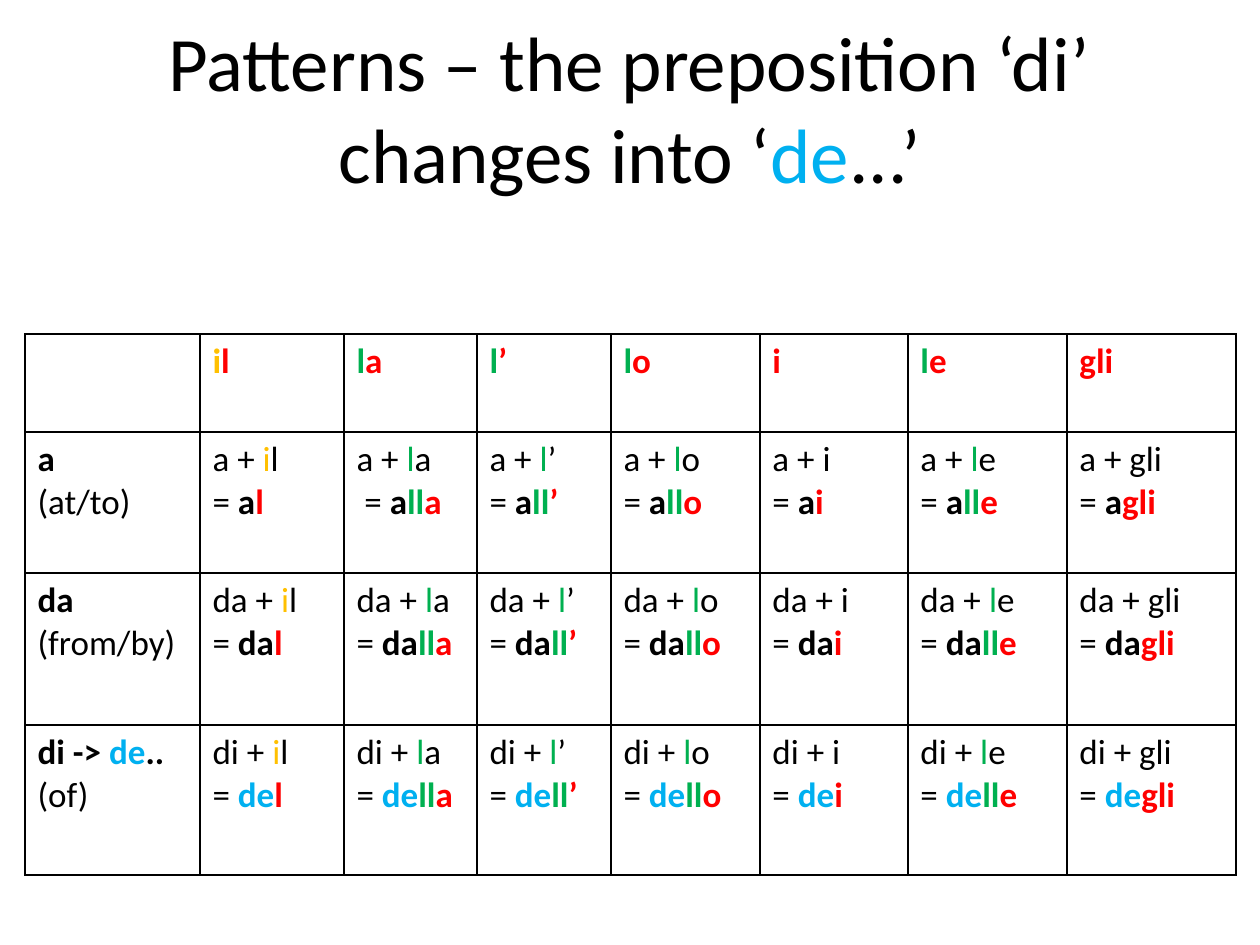
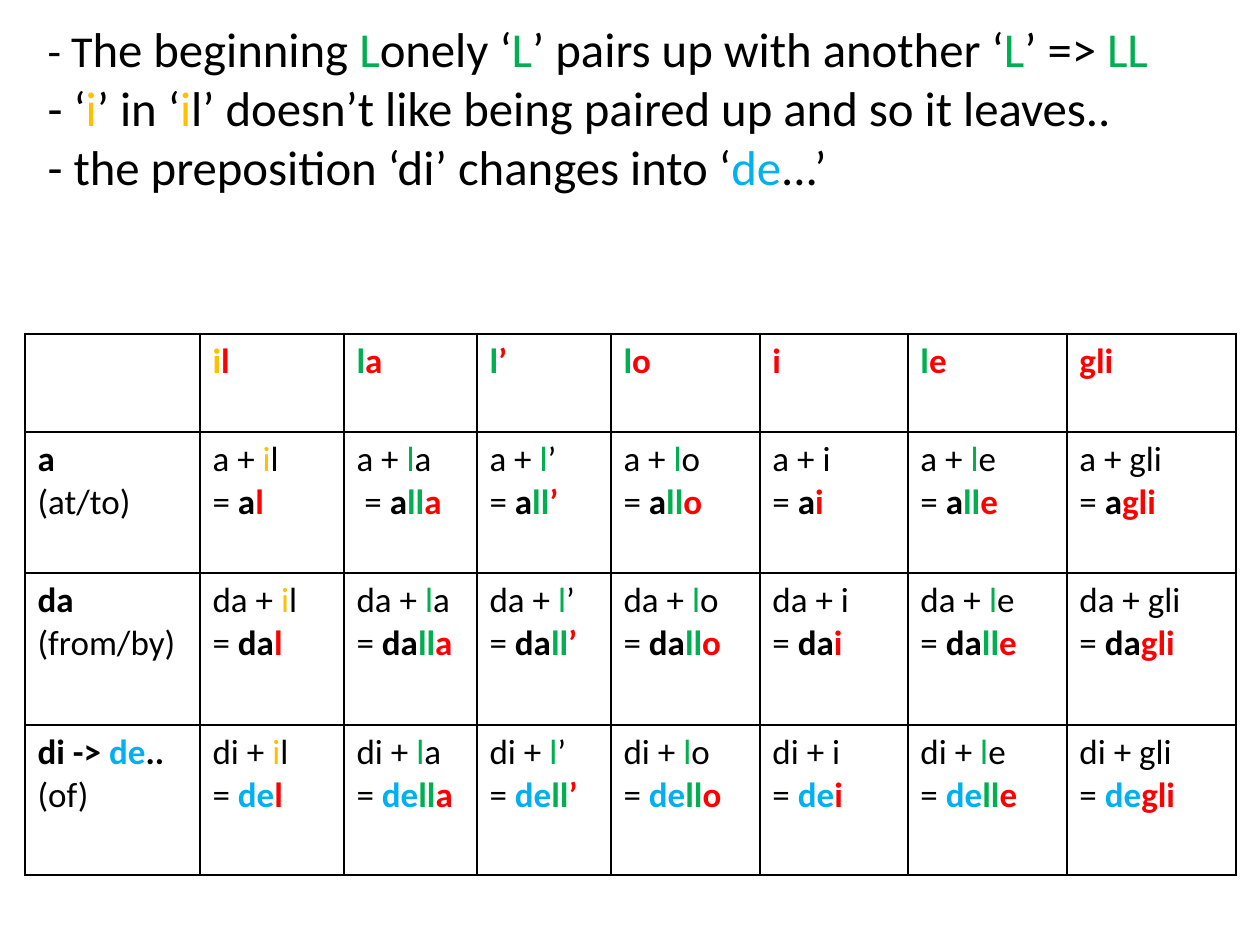
from lxml.etree import SubElement
from pptx import Presentation
from pptx.dml.color import RGBColor
from pptx.enum.text import MSO_ANCHOR, MSO_AUTO_SIZE, PP_ALIGN
from pptx.oxml.ns import qn
from pptx.util import Emu, Pt

BLACK = RGBColor(0x00, 0x00, 0x00)
RED = RGBColor(0xFF, 0x00, 0x00)
GREEN = RGBColor(0x00, 0xB0, 0x50)
AMBER = RGBColor(0xFF, 0xC0, 0x00)
BLUE = RGBColor(0x00, 0xB0, 0xF0)
FONT = "Calibri"

SLIDES = [
    {
        "box": (63, 0, 1134, 214), "align": PP_ALIGN.CENTER, "size": 44,
        "lines": [[("Patterns – the preposition ‘di’ changes into ‘", BLACK),
                   ("de", BLUE), ("...’", BLACK)]],
    },
    {
        "box": (35, 0, 1201, 214), "align": PP_ALIGN.LEFT, "size": 27.9,
        "lines": [
            [("- T", BLACK, 25.2), ("he beginning ", BLACK), ("L", GREEN),
             ("onely ‘", BLACK), ("L", GREEN), ("’ pairs up with another ‘", BLACK),
             ("L", GREEN), ("’ => ", BLACK), ("LL ", GREEN)],
            [("- ‘", BLACK), ("i", AMBER), ("’ in ‘", BLACK), ("i", AMBER),
             ("l’ doesn’t like being paired up and so it leaves..", BLACK)],
            [("- the preposition ‘di’ changes into ‘", BLACK),
             ("de", BLUE), ("...’", BLACK)],
        ],
    },
]

ARTICLES = [("i", "l"), ("l", "a"), ("l", "’"), ("l", "o"), ("", "i"), ("l", "e"), ("", "gli")]
LEAD_COLORS = {"i": AMBER, "l": GREEN, "": BLACK}
PREPOSITIONS = [
    {"name": "a", "label": [("a", BLACK)], "meaning": "(at/to)", "stem": ("a", BLACK)},
    {"name": "da", "label": [("da", BLACK)], "meaning": "(from/by)", "stem": ("da", BLACK)},
    {"name": "di", "label": [("di -> ", BLACK), ("de", BLUE), ("..", BLACK)],
     "meaning": "(of)", "stem": ("de", BLUE)},
]
INDENTED = ("a", "la")

TABLE_LEFT, TABLE_TOP = 25, 334
COLUMNS = [175, 144, 133, 134, 149, 148, 159, 169]
ROWS = [98, 141, 152, 150]
TABLE_SIZE = 20


def px(n):
    return Emu(n * 914400 // 126)


def add_run(p, text, color, bold=None, size=None):
    if text:
        r = p.add_run()
        r.text = text
        r.font.color.rgb = color
        r.font.bold = bold
        if size:
            r.font.size = Pt(size)


def set_font(p, size):
    p.font.name = FONT
    p.font.size = Pt(size)


def add_title(s, box, align, size, lines):
    sp = s.shapes.title
    sp.left, sp.top, sp.width, sp.height = map(px, box)
    tf = sp.text_frame
    tf.word_wrap = True
    tf.auto_size = MSO_AUTO_SIZE.NONE
    tf.vertical_anchor = MSO_ANCHOR.MIDDLE
    p = tf.paragraphs[0]
    p.alignment = align
    set_font(p, size)
    for i, line in enumerate(lines):
        if i:
            p.add_line_break()
        for text, color, *run_size in line:
            add_run(p, text, color, size=run_size[0] if run_size else None)


def contraction(prep, lead, tail):
    indent = " " if (prep["name"], lead + tail) == INDENTED else ""
    doubled = "ll" if lead == "l" else ""
    parts = [(prep["name"] + " + ", BLACK, False), (lead, LEAD_COLORS[lead], False),
             (tail, BLACK, False)]
    result = [(indent + "= ", BLACK, False), (*prep["stem"], True),
              (doubled, GREEN, True), (tail, RED, True)]
    return [parts, result]


def table_rows():
    yield [[]] + [[[(lead, LEAD_COLORS[lead], True), (tail, RED, True)]]
                  for lead, tail in ARTICLES]
    for prep in PREPOSITIONS:
        label = [(text, color, True) for text, color in prep["label"]]
        yield ([[label, [(prep["meaning"], BLACK, False)]]]
               + [contraction(prep, lead, tail) for lead, tail in ARTICLES])


def style_cell(cell):
    tc_pr = cell._tc.get_or_add_tcPr()
    for side in ("a:lnL", "a:lnR", "a:lnT", "a:lnB"):
        ln = SubElement(tc_pr, qn(side), w=str(Pt(1)))
        fill = SubElement(ln, qn("a:solidFill"))
        SubElement(fill, qn("a:srgbClr"), val=str(BLACK))
    cell.fill.background()


def fill_cell(cell, lines):
    style_cell(cell)
    tf = cell.text_frame
    set_font(tf.paragraphs[0], TABLE_SIZE)
    for i, line in enumerate(lines):
        p = tf.add_paragraph() if i else tf.paragraphs[0]
        set_font(p, TABLE_SIZE)
        for text, color, bold in line:
            add_run(p, text, color, bold)


def add_contractions(s):
    table = s.shapes.add_table(len(ROWS), len(COLUMNS), px(TABLE_LEFT), px(TABLE_TOP),
                               px(sum(COLUMNS)), px(sum(ROWS))).table
    table.first_row = table.horz_banding = False
    for column, width in zip(table.columns, COLUMNS):
        column.width = px(width)
    for row, height, contents in zip(table.rows, ROWS, table_rows()):
        row.height = px(height)
        for cell, lines in zip(row.cells, contents):
            fill_cell(cell, lines)


def main():
    prs = Presentation()
    prs.slide_width, prs.slide_height = px(1260), px(945)
    for content in SLIDES:
        s = prs.slides.add_slide(prs.slide_layouts[5])
        add_title(s, **content)
        add_contractions(s)
    prs.save("out.pptx")


if __name__ == "__main__":
    main()
